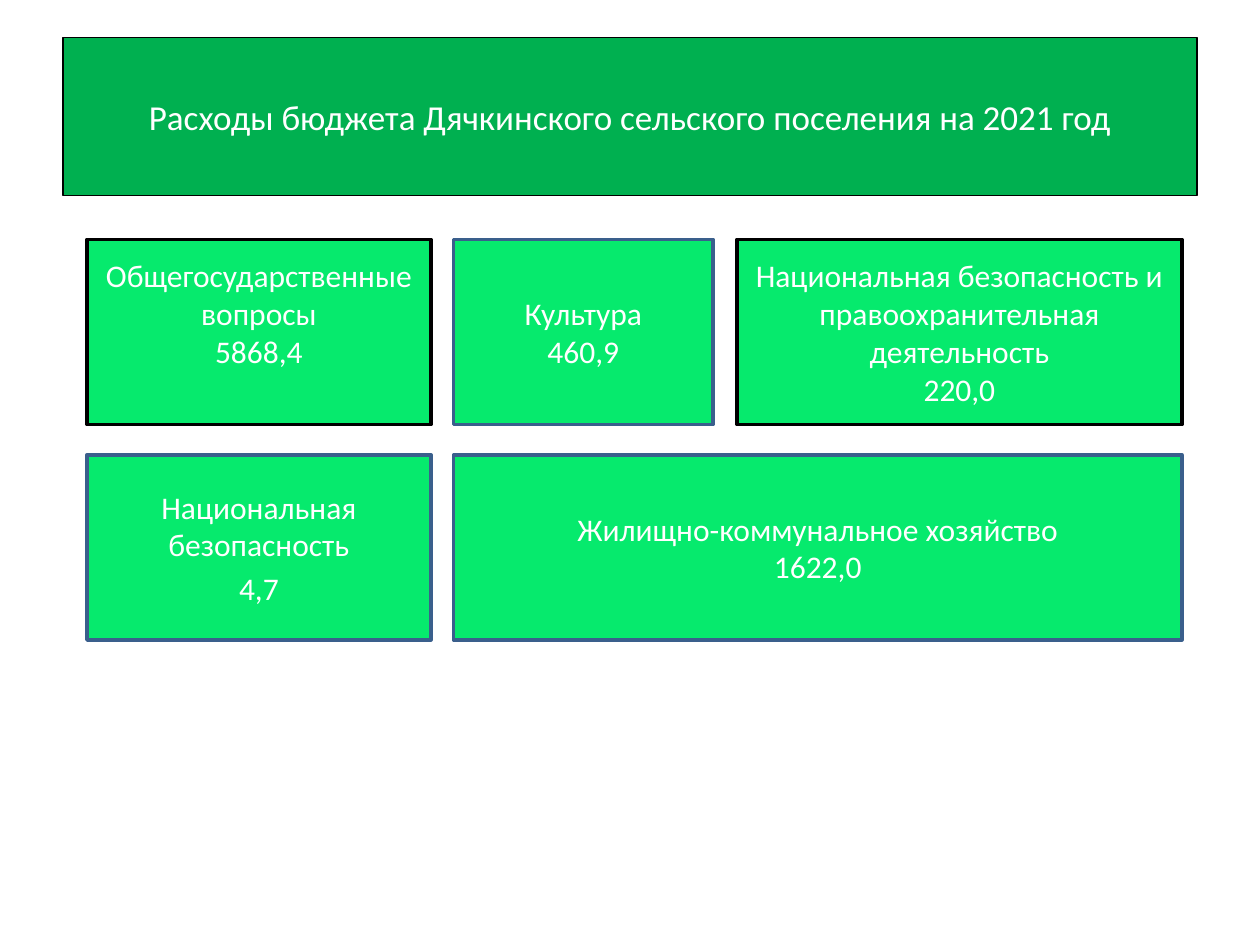
"""Build a slide of village budget spending, one box for each section."""
import pptx
import pptx.util
import pptx.dml.color
import pptx.enum.shapes
import pptx.enum.text

Inches, Pt = pptx.util.Inches, pptx.util.Pt
RGBColor = pptx.dml.color.RGBColor
BLACK = RGBColor(0x00, 0x00, 0x00)
WHITE = RGBColor(0xFF, 0xFF, 0xFF)
GREEN = RGBColor(0x00, 0xB0, 0x50)
LIME = RGBColor(0x06, 0xEA, 0x6D)
BLUE = RGBColor(0x3A, 0x5F, 0x8C)

LEFTS = [0.69, 3.6, 5.85]
RIGHTS = [3.42, 5.66, 9.38]
TOPS = [1.9, 3.61]
HIGH = 1.47


def paint(shape, fill, edge, width):
    shape.fill.solid()
    shape.fill.fore_color.rgb = fill
    shape.line.color.rgb = edge
    shape.line.width = Pt(width)


def write(frame, lines, size, space):
    frame.word_wrap = True
    frame.vertical_anchor = pptx.enum.text.MSO_ANCHOR.MIDDLE
    for index, line in enumerate(lines):
        para = frame.paragraphs[0] if index == 0 else frame.add_paragraph()
        para.alignment = pptx.enum.text.PP_ALIGN.CENTER
        para.space_before = Pt(space)
        run = para.add_run()
        run.text = line
        run.font.name = "Calibri"
        run.font.size = Pt(size)
        run.font.color.rgb = WHITE


deck = pptx.Presentation()
deck.slide_width, deck.slide_height = Inches(10), Inches(7.5)
slide = deck.slides.add_slide(deck.slide_layouts[5])

title = slide.shapes.title
title.left, title.top = Inches(0.5), Inches(0.3)
title.width, title.height = Inches(9), Inches(1.25)
paint(title, GREEN, BLACK, 0.75)
write(title.text_frame, ["Расходы бюджета Дячкинского сельского поселения на 2021 год"], 20, 0)

boxes = [
    (0, 0, 0, BLACK, 0, 0.35, "Общегосударственные вопросы", "5868,4"),
    (0, 1, 1, BLUE, 0, 0.05, "Культура", "460,9"),
    (1, 0, 0, BLUE, 3.6, 0.05, "Национальная безопасность", "4,7"),
    (1, 1, 2, BLUE, 0, 0.05, "Жилищно-коммунальное хозяйство", "1622,0"),
    (0, 2, 2, BLACK, 0, 0.05,
     "Национальная безопасность и правоохранительная деятельность", "220,0"),
]
for row, first, last, edge, space, base, name, sum_ in boxes:
    box = slide.shapes.add_shape(
        pptx.enum.shapes.MSO_SHAPE.RECTANGLE, Inches(LEFTS[first]), Inches(TOPS[row]),
        Inches(RIGHTS[last] - LEFTS[first]), Inches(HIGH))
    box.shadow.inherit = False
    paint(box, LIME, edge, 2)
    box.text_frame.margin_bottom = Inches(base)
    write(box.text_frame, [name, sum_], 18, space)

deck.save("out.pptx")
